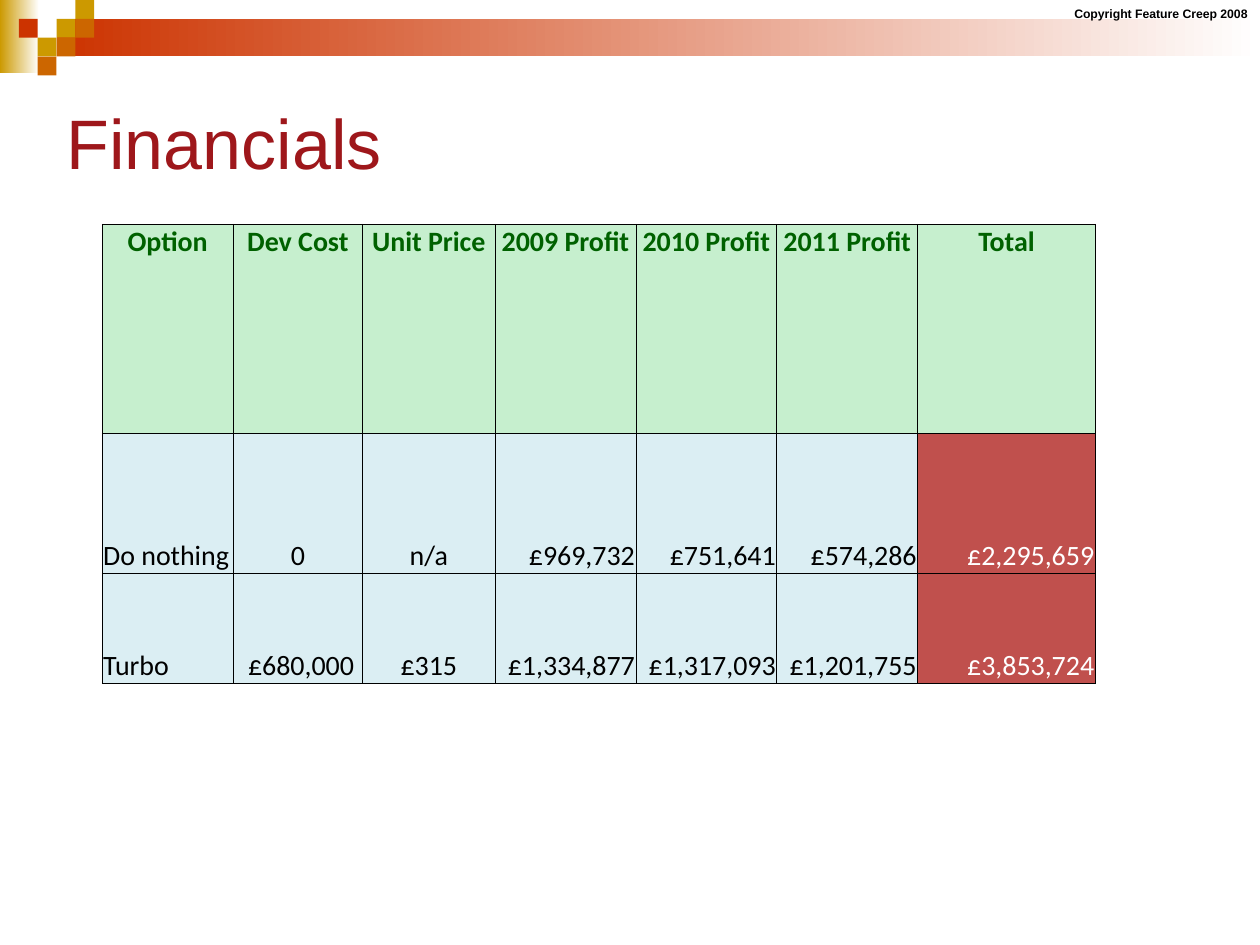
from lxml import etree
from pptx import Presentation, util as u
from pptx.dml.color import RGBColor
from pptx.enum import shapes, text
from pptx.oxml.ns import qn


def color(value):
    return RGBColor.from_string(value)


def write(frame, content, name, size, fill, bold=False, align=text.PP_ALIGN.LEFT):
    paragraph = frame.paragraphs[0]
    paragraph.alignment = align
    run = paragraph.add_run()
    run.text = content
    for key, value in {"name": name, "size": u.Pt(size), "bold": bold}.items():
        setattr(run.font, key, value)
    run.font.color.rgb = color(fill)


presentation = Presentation()
presentation.slide_width = u.Cm(25.4)
presentation.slide_height = u.Cm(19.05)
slide = presentation.slides.add_slide(presentation.slide_layouts[5])

unit = 0.38
bands = [
    (0, 0, 0.79, 1.47, "CC9900"),
    (1.14, unit, 24.26, 0.76, "CC3300"),
]
squares = [
    (3, 1, "CC9900"), (4, 0, "CC9900"), (4, 1, "CC6600"), (2, 2, "CC9900"),
    (1, 1, "CC3300"), (3, 2, "CC6600"), (2, 3, "CC6600"),
]
tiles = [(column * unit, row * unit, unit, unit, fill) for column, row, fill in squares]
for index, (left, top, width, height, fill) in enumerate(bands + tiles):
    shape = slide.shapes.add_shape(
        shapes.MSO_SHAPE.RECTANGLE, u.Cm(left), u.Cm(top), u.Cm(width), u.Cm(height))
    shape.shadow.inherit = False
    shape.line.fill.background()
    if index < len(bands):
        shape.fill.gradient()
        shape.fill.gradient_angle = 0
        for stop, shade in zip(shape.fill.gradient_stops, (fill, "FFFFFF")):
            stop.color.rgb = color(shade)
    else:
        shape.fill.solid()
        shape.fill.fore_color.rgb = color(fill)

copyright_box = slide.shapes.add_textbox(u.Cm(21.34), u.Cm(0), u.Cm(4.06), u.Cm(0.56))
copyright_box.text_frame.word_wrap = False
write(copyright_box.text_frame, "Copyright Feature Creep 2008", "Arial", 7, "000000",
      True, text.PP_ALIGN.RIGHT)

title = slide.shapes.title
title_format = {"left": u.Cm(1.09), "top": u.Cm(1.27), "width": u.Cm(24.31), "height": u.Cm(3.15)}
for key, value in title_format.items():
    setattr(title, key, value)
title.text_frame.vertical_anchor = text.MSO_ANCHOR.MIDDLE
write(title.text_frame, "Financials", "Arial", 40, "9E171B")

rows = [
    ["Option", "Dev Cost", "Unit Price", "2009 Profit", "2010 Profit", "2011 Profit", "Total"],
    ["Do nothing", "0", "n/a", "£969,732", "£751,641", "£574,286", "£2,295,659"],
    ["Turbo", " £680,000", "£315", "£1,334,877", "£1,317,093", "£1,201,755", "£3,853,724"],
]
widths = [2.64, 2.61, 2.67, 2.84, 2.84, 2.84, 3.58]
heights = [4.22, 2.82, 2.21]
left, center, right = text.PP_ALIGN.LEFT, text.PP_ALIGN.CENTER, text.PP_ALIGN.RIGHT
alignments = [left, center, center, right, right, right, right]

table = slide.shapes.add_table(
    len(rows), len(widths), u.Cm(2.06), u.Cm(4.52), u.Cm(sum(widths)), u.Cm(sum(heights))).table
for column, width in zip(table.columns, widths):
    column.width = u.Cm(width)
for row, height in zip(table.rows, heights):
    row.height = u.Cm(height)

for row_index, row in enumerate(rows):
    for column_index, content in enumerate(row):
        cell = table.cell(row_index, column_index)
        header = row_index == 0
        total = column_index == len(row) - 1
        if header:
            fill, ink = "C6EFCE", "006100"
        elif total:
            fill, ink = "C0504D", "FFFFFF"
        else:
            fill, ink = "DBEEF3", "000000"
        cell_format = {
            "margin_left": u.Cm(0.02), "margin_right": u.Cm(0.02),
            "margin_top": u.Cm(0.02), "margin_bottom": u.Cm(0),
            "vertical_anchor": text.MSO_ANCHOR.TOP if header else text.MSO_ANCHOR.BOTTOM,
        }
        for key, value in cell_format.items():
            setattr(cell, key, value)
        properties = cell._tc.get_or_add_tcPr()
        for side in ("a:lnL", "a:lnR", "a:lnT", "a:lnB"):
            border = etree.SubElement(properties, qn(side), w=str(u.Pt(0.5)))
            solid = etree.SubElement(border, qn("a:solidFill"))
            etree.SubElement(solid, qn("a:srgbClr"), val="000000")
        cell.fill.solid()
        cell.fill.fore_color.rgb = color(fill)
        write(cell.text_frame, content, "Calibri", 16, ink, header,
              center if header else alignments[column_index])

presentation.save("out.pptx")
